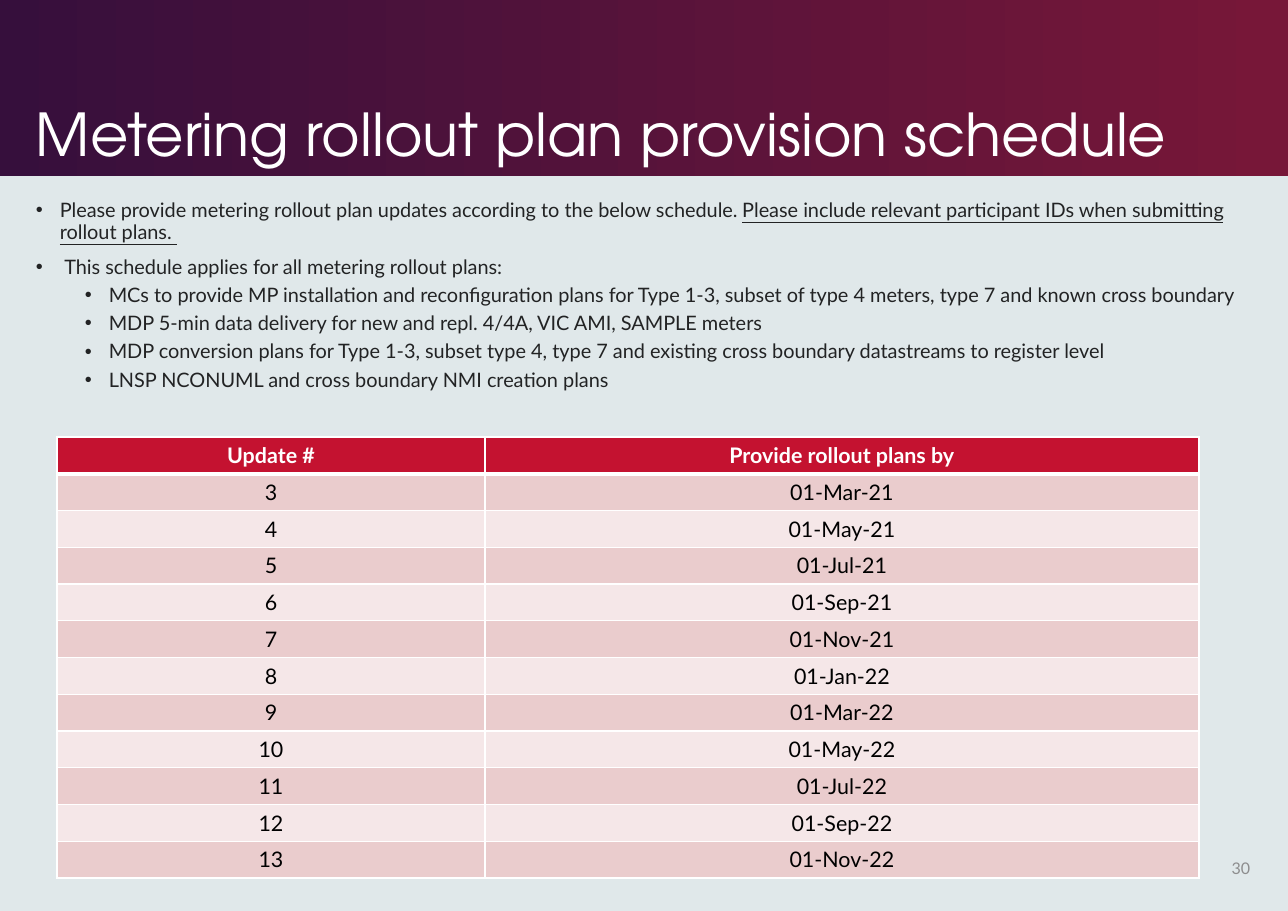
from pptx import Presentation
from pptx.dml.color import RGBColor
from pptx.enum.shapes import MSO_SHAPE as Shape
from pptx.enum.text import MSO_ANCHOR as Anchor, PP_ALIGN as Align
from pptx.oxml.ns import qn
from pptx.util import Pt
from lxml.etree import SubElement

TITLE = "Metering rollout plan provision schedule"
PAGE_NUMBER = "30"
# Each bullet: level, then (text, underlined) pieces
BULLETS = [
    (0, [("Please provide metering rollout plan updates according to the below schedule. ", False),
         ("Please include relevant participant IDs when submitting rollout plans. ", True)]),
    (0, [(" This schedule applies for all metering rollout plans:", False)]),
    (1, [("MCs to provide MP installation and reconfiguration plans for Type 1-3, "
          "subset of type 4 meters, type 7 and known cross boundary", False)]),
    (1, [("MDP 5-min data delivery for new and repl. 4/4A, VIC AMI, SAMPLE meters", False)]),
    (1, [("MDP conversion plans for Type 1-3, subset type 4, type 7 and existing "
          "cross boundary datastreams to register level", False)]),
    (1, [("LNSP NCONUML and cross boundary NMI creation plans", False)]),
]
SCHEDULE = [
    ("Update #", "Provide rollout plans by"),
    ("3", "01-Mar-21"),
    ("4", "01-May-21"),
    ("5", "01-Jul-21"),
    ("6", "01-Sep-21"),
    ("7", "01-Nov-21"),
    ("8", "01-Jan-22"),
    ("9", "01-Mar-22"),
    ("10", "01-May-22"),
    ("11", "01-Jul-22"),
    ("12", "01-Sep-22"),
    ("13", "01-Nov-22"),
]

EMU_PER_PX = 8298
SLIDE_WIDTH, SLIDE_HEIGHT = 1288, 911
BANNER_HEIGHT = 176
TABLE_BOX = (57, 437, 1142, 441)
COLUMN_WIDTHS = (428, 714)
CELL_INSET = 5
BULLET_INDENTS = (24, 73)
BULLET_HANG = 24
BULLET_SPACES = (8.8, 4.4)
HEADER_FILL = "C41230"
BAND_FILLS = ("F5E7E8", "EACCCD")


def px(length):
    return round(length * EMU_PER_PX)


def rgb(color):
    return RGBColor.from_string(color)


def add_text(paragraph, text, size=14, color="000000", font="Lato", bold=False,
             underline=False, align=None, line_spacing=None):
    run = paragraph.add_run()
    run.text = text
    run.font.name, run.font.size = font, Pt(size)
    run.font.color.rgb = rgb(color)
    run.font.bold, run.font.underline = bold, underline
    if align is not None:
        paragraph.alignment = align
    if line_spacing is not None:
        paragraph.line_spacing = line_spacing


def add_box(slide, left, top, width, height, anchor=Anchor.TOP):
    box = slide.shapes.add_textbox(px(left), px(top), px(width), px(height))
    frame = box.text_frame
    frame.word_wrap = True
    frame.vertical_anchor = anchor
    return frame


def add_banner(slide):
    banner = slide.shapes.add_shape(Shape.RECTANGLE, 0, 0, px(SLIDE_WIDTH), px(BANNER_HEIGHT))
    banner.shadow.inherit = False
    banner.line.fill.background()
    banner.fill.gradient()
    banner.fill.gradient_angle = 0
    for stop, position, color in zip(banner.fill.gradient_stops, (0, 0.99), ("360F3C", "771738")):
        stop.position = position
        stop.color.rgb = rgb(color)


def set_bullet(paragraph, level):
    paragraph.level = level
    properties = paragraph._p.get_or_add_pPr()
    properties.set("marL", str(px(BULLET_INDENTS[level])))
    properties.set("indent", str(-px(BULLET_HANG)))
    SubElement(properties, qn("a:buFont"), typeface="Arial")
    SubElement(properties, qn("a:buChar"), char="•")


def add_bullets(slide):
    frame = add_box(slide, 25, 195, 1236, 188)
    for index, (level, pieces) in enumerate(BULLETS):
        paragraph = frame.add_paragraph() if index else frame.paragraphs[0]
        set_bullet(paragraph, level)
        if index:
            paragraph.space_before = Pt(BULLET_SPACES[level])
        for text, underline in pieces:
            add_text(paragraph, text, size=13, color="222324", underline=underline,
                     line_spacing=0.9)


def set_borders(cell, **widths):
    """Draw white borders; widths in points are given by side: L, R, T, B."""
    properties = cell._tc.get_or_add_tcPr()
    for side, width in widths.items():
        line = SubElement(properties, qn(f"a:ln{side}"), w=str(Pt(width)))
        fill = SubElement(line, qn("a:solidFill"))
        SubElement(fill, qn("a:srgbClr"), val="FFFFFF")


def add_schedule(slide):
    box = [px(length) for length in TABLE_BOX]
    table = slide.shapes.add_table(len(SCHEDULE), len(COLUMN_WIDTHS), *box).table
    for column, width in zip(table.columns, COLUMN_WIDTHS):
        column.width = px(width)
    for row_index, values in enumerate(SCHEDULE):
        header = row_index == 0
        table.rows[row_index].height = px(TABLE_BOX[3] / len(SCHEDULE))
        for column_index, text in enumerate(values):
            cell = table.cell(row_index, column_index)
            set_borders(cell, L=1, R=1, T=3 if row_index == 1 else 1, B=3 if header else 1)
            cell.fill.solid()
            cell.fill.fore_color.rgb = rgb(HEADER_FILL if header else BAND_FILLS[row_index % 2])
            cell.vertical_anchor = Anchor.MIDDLE
            cell.margin_left = cell.margin_right = px(CELL_INSET)
            cell.margin_top = cell.margin_bottom = px(CELL_INSET)
            add_text(cell.text_frame.paragraphs[0], text, bold=header,
                     color="FFFFFF" if header else "000000", align=Align.CENTER)


def main():
    presentation = Presentation()
    presentation.slide_width, presentation.slide_height = px(SLIDE_WIDTH), px(SLIDE_HEIGHT)
    slide = presentation.slides.add_slide(presentation.slide_layouts[6])
    slide.background.fill.solid()
    slide.background.fill.fore_color.rgb = rgb("E0E8EA")

    add_banner(slide)
    title = add_box(slide, 25, 18, 1263, 157, Anchor.BOTTOM)
    add_text(title.paragraphs[0], TITLE, size=38.6, color="FFFFFF",
             font="TeX Gyre Adventor", line_spacing=0.9)
    page_number = add_box(slide, 1200, 844, 61, 48, Anchor.MIDDLE)
    add_text(page_number.paragraphs[0], PAGE_NUMBER, size=10.5, color="8D8D8E", align=Align.RIGHT)
    add_schedule(slide)
    add_bullets(slide)
    presentation.save("out.pptx")


if __name__ == "__main__":
    main()
